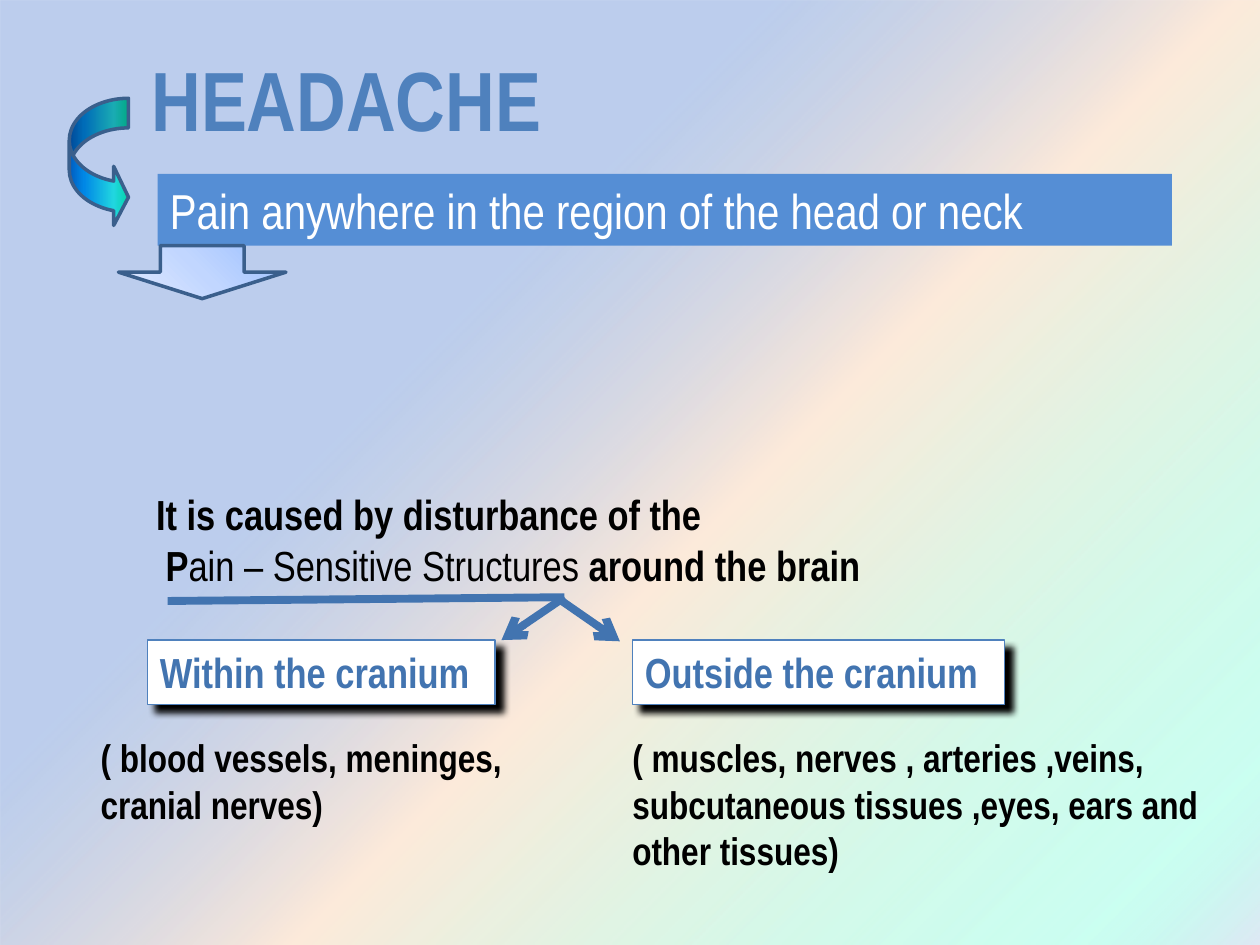
from pptx import Presentation
from pptx.dml.color import RGBColor
from pptx.enum.shapes import MSO_CONNECTOR, MSO_SHAPE
from pptx.enum.text import MSO_ANCHOR, PP_ALIGN
from pptx.oxml import parse_xml
from pptx.oxml.ns import nsdecls, qn
from pptx.util import Pt

PX = 9144  # one px is 1/100 inch
RECT, CURVE, DOWN = (MSO_SHAPE.RECTANGLE, MSO_SHAPE.CURVED_RIGHT_ARROW,
                     MSO_SHAPE.DOWN_ARROW)
LINE = MSO_CONNECTOR.STRAIGHT
LEFT, MID, TOP = PP_ALIGN.LEFT, PP_ALIGN.CENTER, MSO_ANCHOR.TOP

THEME = {
    "font": "Arial Narrow",
    "title": 48, "banner": 28, "body": 24, "note": 22,
    "black": "000000", "white": "FFFFFF", "blue": "4F81BD",
    "band": "558ED5", "link": "4274B0", "edge": "3A5F8C",
    # gradients: angle, then (position, colour, opacity)
    "back": (45, [(35, "9AB5E4", 66), (56, "FDEADA", 100),
                  (92, "A3FFE7", 56), (100, "E1E8F5", 100)]),
    "teal": (180, [(0, "03D4A8", 100), (25, "21D6E0", 100),
                   (75, "0087E6", 100), (100, "005CBF", 100)]),
    "pale": (135, [(0, "9ABFFF", 100), (50, "C1D6FF", 100),
                   (100, "E1EAFF", 100)]),
}

# Content: a paragraph is a list of (text, bold) runs
TITLE = [[("HEADACHE ", True)]]
BANNER = [[("Pain anywhere in the region of the head or neck", False)]]
CAUSE = [
    [("It is caused by disturbance of the", True)],
    [(" P", True), ("ain – Sensitive Structures ", False),
     ("around the brain", True)],
]
# heading, its left and width, note, its left, width and height
SITES = [
    ("Within the cranium", 117, 276,
     "( blood vessels, meninges, cranial nerves)", 70, 344, 84),
    ("Outside the cranium", 502, 295,
     "( muscles, nerves , arteries ,veins, subcutaneous tissues ,eyes, "
     "ears and other tissues)", 492, 500, 121),
]
# from, to, has arrowhead
LINKS = [
    ((133, 477), (448, 474), False),
    ((448, 474), (398, 508), True),
    ((443, 475), (492, 509), True),
]


def emu(*nums):
    return [n * PX for n in nums]


def rgb(name):
    return RGBColor.from_string(THEME[name])


def shade(shape, name):
    angle, stops = THEME[name]
    marks = "".join(
        f'<a:gs pos="{pos * 1000}"><a:srgbClr val="{tone}">'
        f'<a:alpha val="{alpha * 1000}"/></a:srgbClr></a:gs>'
        for pos, tone, alpha in stops)
    grad = parse_xml(
        f'<a:gradFill {nsdecls("a")} rotWithShape="1"><a:gsLst>{marks}</a:gsLst>'
        f'<a:lin ang="{angle * 60000}" scaled="0"/></a:gradFill>')
    shape._element.spPr.find(qn("a:prstGeom")).addnext(grad)


def drop(shape):
    shadow = parse_xml(
        f'<a:outerShdw {nsdecls("a")} blurRad="{Pt(4)}" dist="{Pt(6)}" '
        f'dir="2700000" algn="tl" rotWithShape="0">'
        f'<a:srgbClr val="{THEME["black"]}"/></a:outerShdw>')
    shape._element.spPr.find(qn("a:effectLst")).append(shadow)


def add_form(slide, kind, box, fill, edge=None, width=2):
    shape = slide.shapes.add_shape(kind, *emu(*box))
    shape.shadow.inherit = False
    if isinstance(THEME[fill], tuple):
        shade(shape, fill)
    else:
        shape.fill.solid()
        shape.fill.fore_color.rgb = rgb(fill)
    if edge:
        shape.line.color.rgb = rgb(edge)
        shape.line.width = Pt(width)
    else:
        shape.line.fill.background()
    return shape


def write(shape, paras, size, tone, align=LEFT):
    frame = shape.text_frame
    frame.word_wrap = True
    frame.vertical_anchor = TOP
    for i, runs in enumerate(paras):
        para = frame.add_paragraph() if i else frame.paragraphs[0]
        para.alignment = align
        for text, bold in runs:
            run = para.add_run()
            run.text = text
            run.font.name = THEME["font"]
            run.font.size = Pt(THEME[size])
            run.font.bold = bold
            run.font.color.rgb = rgb(tone)


def add_text(slide, box, *style):
    write(slide.shapes.add_textbox(*emu(*box)), *style)


def add_link(slide, start, end, head):
    link = slide.shapes.add_connector(LINE, *emu(*start, *end))
    link.line.color.rgb = rgb("link")
    link.line.width = Pt(4.5)
    if head:
        link.line._get_or_add_ln().append(
            parse_xml(f'<a:tailEnd {nsdecls("a")} type="arrow"/>'))
    link._element.spPr.append(parse_xml(f'<a:effectLst {nsdecls("a")}/>'))


def main():
    deck = Presentation()
    deck.slide_width, deck.slide_height = emu(1000, 750)
    slide = deck.slides.add_slide(deck.slide_layouts[6])

    # Backdrop, title and definition
    add_form(slide, RECT, (0, 0, 1000, 750), "back")
    add_text(slide, (104, 33, 342, 91), TITLE, "title", "blue", MID)
    band = add_form(slide, RECT, (125, 138, 805, 57), "band")
    write(band, BANNER, "banner", "white")

    # Cause
    add_text(slide, (114, 383, 667, 91), CAUSE, "body", "black")

    # Block arrows
    curve = add_form(slide, CURVE, (55, 78, 47, 102), "teal", "edge")
    for i, value in enumerate((0.5, 0.999, 0.25)):
        curve.adjustments[i] = value
    add_form(slide, DOWN, (94, 195, 133, 42), "pale", "edge")

    # Two sites with their notes
    for head, left, width, note, x, wide, high in SITES:
        card = add_form(slide, RECT, (left, 508, width, 51), "white", "blue", 0.75)
        drop(card)
        write(card, [[(head, True)]], "body", "link")
        add_text(slide, (x, 578, wide, high), [[(note, True)]], "note", "black")

    # Underline and branches
    for link in LINKS:
        add_link(slide, *link)

    deck.save("out.pptx")


if __name__ == "__main__":
    main()
